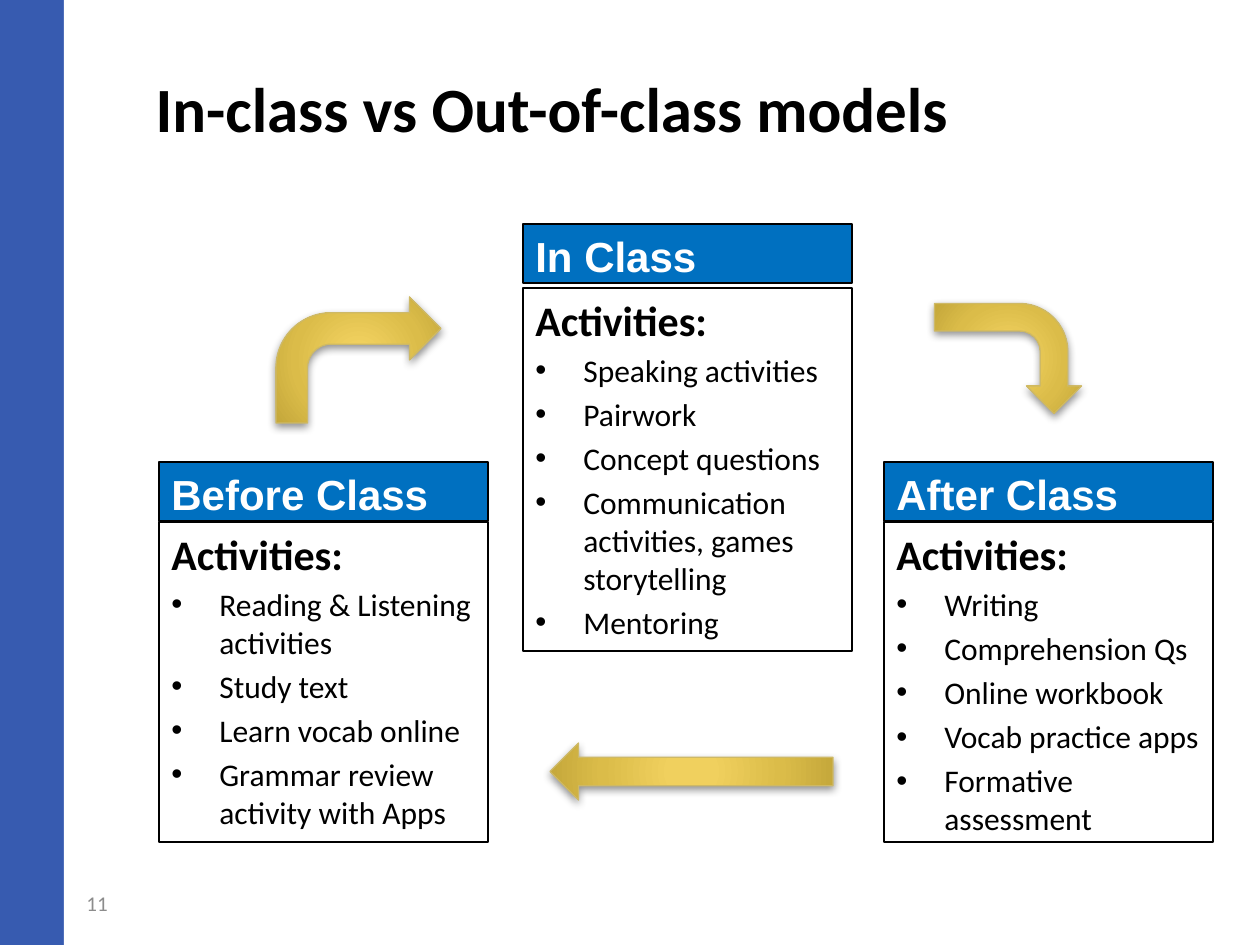
from lxml.etree import SubElement
from pptx import Presentation
from pptx.dml.color import RGBColor
from pptx.enum.shapes import MSO_SHAPE as SHAPE
from pptx.enum.text import MSO_ANCHOR as ANCHOR, PP_ALIGN as ALIGN
from pptx.oxml.ns import qn
from pptx.util import Emu, Pt

COLORS = {"blue": "375BB0", "header": "0070C0", "white": "FFFFFF", "black": "000000",
          "grey": "8C8C8C", "gold": "CEB966"}
GOLD_STOPS = [(0, "F1D15E"), (15, "F0D05E"), (62, "DBBC49"), (97, "C6A93C"), (100, "C5A835")]

TITLE = "In-class vs Out-of-class models"
PAGE = "11"
CARD_W, HEADER_H, INDENT = 329, 59, 48
# heading, left, top, gap under heading, body height, activities
CARDS = [
    ("Before Class", 159, 462, 1, 320,
     ["Reading & Listening activities", "Study text", "Learn vocab online",
      "Grammar review activity with Apps"]),
    ("In Class", 523, 224, 5, 363,
     ["Speaking activities", "Pairwork", "Concept questions",
      "Communication activities, games storytelling", "Mentoring"]),
    ("After Class", 884, 462, 1, 320,
     ["Writing", "Comprehension Qs", "Online workbook", "Vocab practice apps",
      "Formative assessment"]),
]
# preset, box before rotation, rotation
ARROWS = [
    (SHAPE.BENT_ARROW, (276, 297, 165, 126), 0),
    (SHAPE.BENT_ARROW, (953, 285, 110, 147), 90),
    (SHAPE.RIGHT_ARROW, (550, 743, 283, 57), 180),
]


def px(n):
    return Emu(round(n * 914400 / 126))


def rgb(name):
    return RGBColor.from_string(COLORS[name])


def add_run(p, text, size, color, bold=False, font="Calibri"):
    r = p.add_run()
    r.text = text
    r.font.size, r.font.bold, r.font.name = Pt(size), bold, font
    r.font.color.rgb = rgb(color)


def add_box(s, box, fill=None, line=None, preset=SHAPE.RECTANGLE):
    sp = s.shapes.add_shape(preset, *map(px, box))
    sp.shadow.inherit = False
    if fill:
        sp.fill.solid()
        sp.fill.fore_color.rgb = rgb(fill)
    else:
        sp.fill.background()
    if line:
        sp.line.color.rgb = rgb(line)
        sp.line.width = Pt(0.75)
    else:
        sp.line.fill.background()
    tf = sp.text_frame
    tf.word_wrap, tf.vertical_anchor = True, ANCHOR.TOP
    tf.paragraphs[0].alignment = ALIGN.LEFT
    return sp


def add_bullet(p):
    pPr = p._p.get_or_add_pPr()
    pPr.set("marL", str(px(INDENT)))
    pPr.set("indent", str(-px(INDENT)))
    SubElement(pPr, qn("a:buFont"), typeface="Arial")
    SubElement(pPr, qn("a:buChar"), char="•")


def add_card(s, heading, x, y, gap, body_h, activities):
    body = add_box(s, (x, y + HEADER_H + gap, CARD_W, body_h), line="black")
    tf = body.text_frame
    add_run(tf.paragraphs[0], "Activities:", 24, "black", bold=True)
    for activity in activities:
        p = tf.add_paragraph()
        add_bullet(p)
        p.alignment, p.space_before = ALIGN.LEFT, Pt(3.6)
        add_run(p, activity, 18, "black")
    header = add_box(s, (x, y, CARD_W, HEADER_H), "header", "black")
    add_run(header.text_frame.paragraphs[0], heading, 24, "white", True, "Arial")


def add_arrow(s, preset, box, rotation):
    """Add a gold arrow with a radial gradient and a soft shadow."""
    sp = add_box(s, box, "gold", "gold", preset)
    sp.rotation = rotation
    spPr = sp._element.spPr
    spPr.remove(spPr.find(qn("a:solidFill")))
    grad = SubElement(spPr, qn("a:gradFill"), rotWithShape="1")
    spPr.find(qn("a:prstGeom")).addnext(grad)
    stops = SubElement(grad, qn("a:gsLst"))
    for pos, color in GOLD_STOPS:
        gs = SubElement(stops, qn("a:gs"), pos=str(pos * 1000))
        SubElement(gs, qn("a:srgbClr"), val=color)
    path = SubElement(grad, qn("a:path"), {"path": "circle"})
    SubElement(path, qn("a:fillToRect"), dict.fromkeys("ltrb", "100000"))
    shadow = SubElement(spPr.find(qn("a:effectLst")), qn("a:outerShdw"), blurRad=str(Pt(5)),
                        dist=str(Pt(2)), dir="5400000", rotWithShape="0")
    black = SubElement(shadow, qn("a:srgbClr"), val=COLORS["black"])
    SubElement(black, qn("a:alpha"), val="43000")


def main():
    prs = Presentation()
    prs.slide_width, prs.slide_height = px(1260), px(945)
    s = prs.slides.add_slide(prs.slide_layouts[5])
    s.background.fill.solid()
    s.background.fill.fore_color.rgb = rgb("blue")

    panel = add_box(s, (64, 0, 1196, 945), "white")
    s.shapes._spTree.insert(2, panel._element)

    title = s.shapes.title
    title.left, title.top, title.width, title.height = map(px, (143, 64, 1068, 87))
    tf = title.text_frame
    tf.vertical_anchor = ANCHOR.MIDDLE
    tf.paragraphs[0].alignment = ALIGN.LEFT
    add_run(tf.paragraphs[0], TITLE, 36, "black", bold=True)

    for card in CARDS:
        add_card(s, *card)

    number = s.shapes.add_textbox(*map(px, (74, 878, 294, 50)))
    tf = number.text_frame
    tf.word_wrap, tf.vertical_anchor = True, ANCHOR.MIDDLE
    add_run(tf.paragraphs[0], PAGE, 12, "grey")

    for arrow in ARROWS:
        add_arrow(s, *arrow)
    prs.save("out.pptx")


if __name__ == "__main__":
    main()
